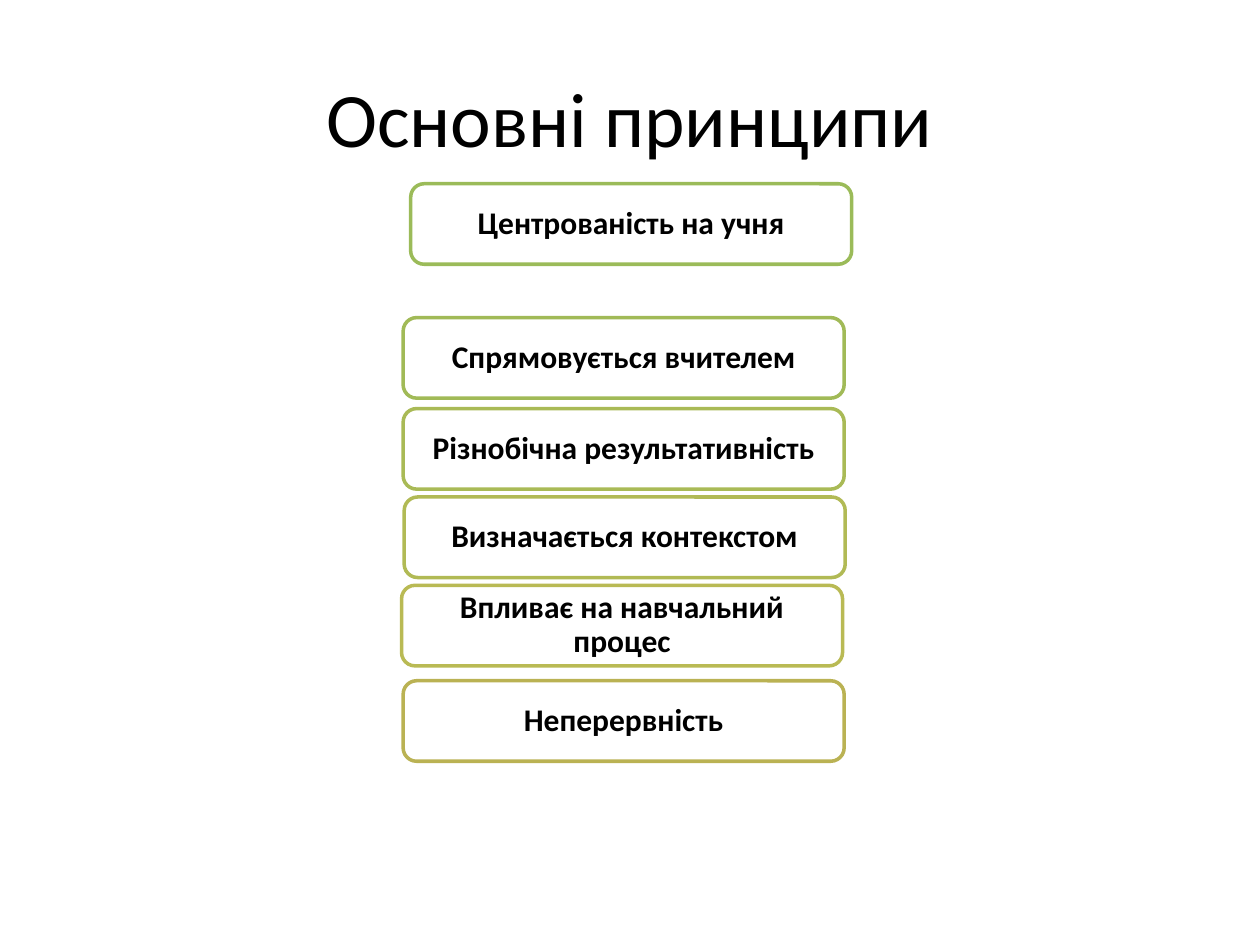
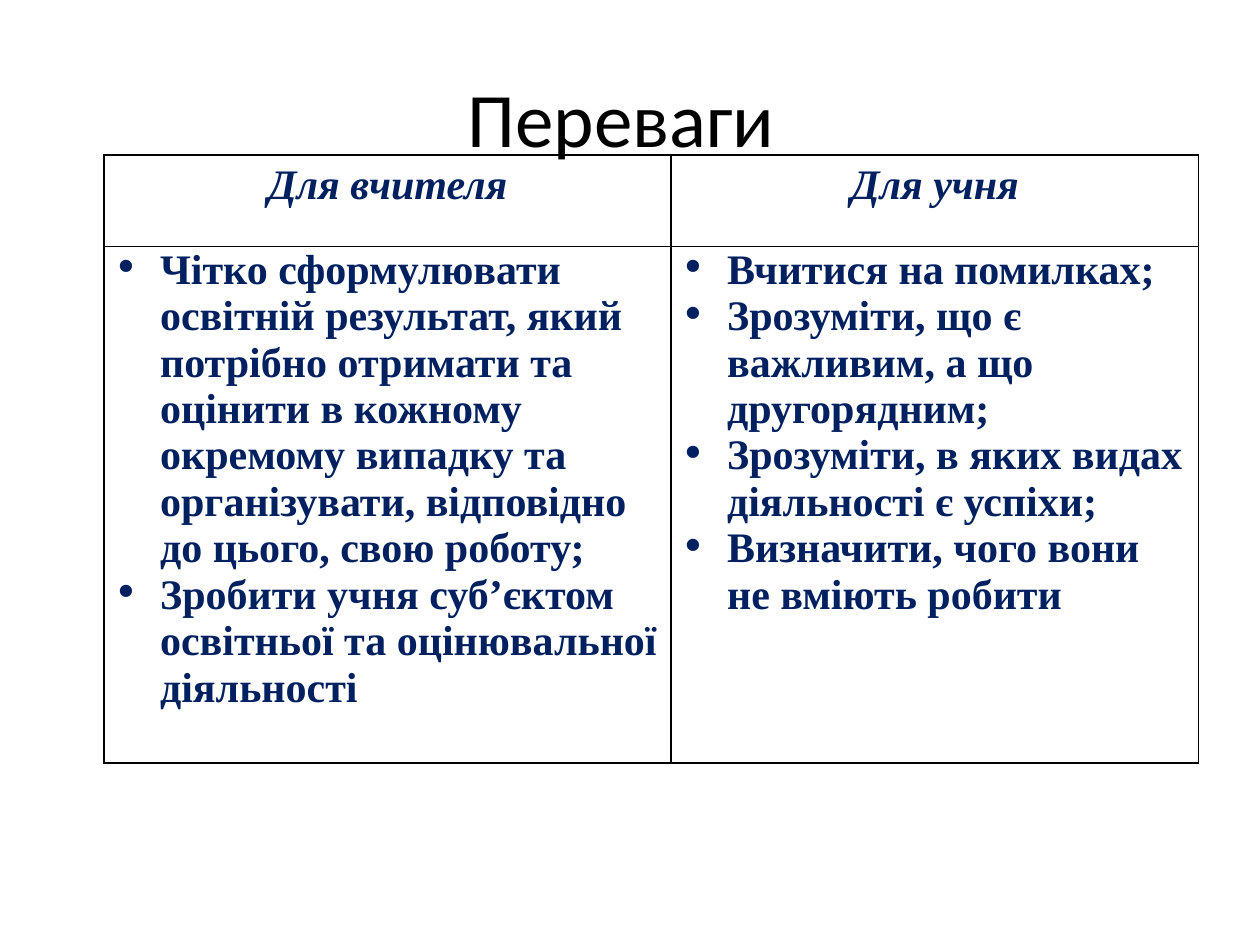
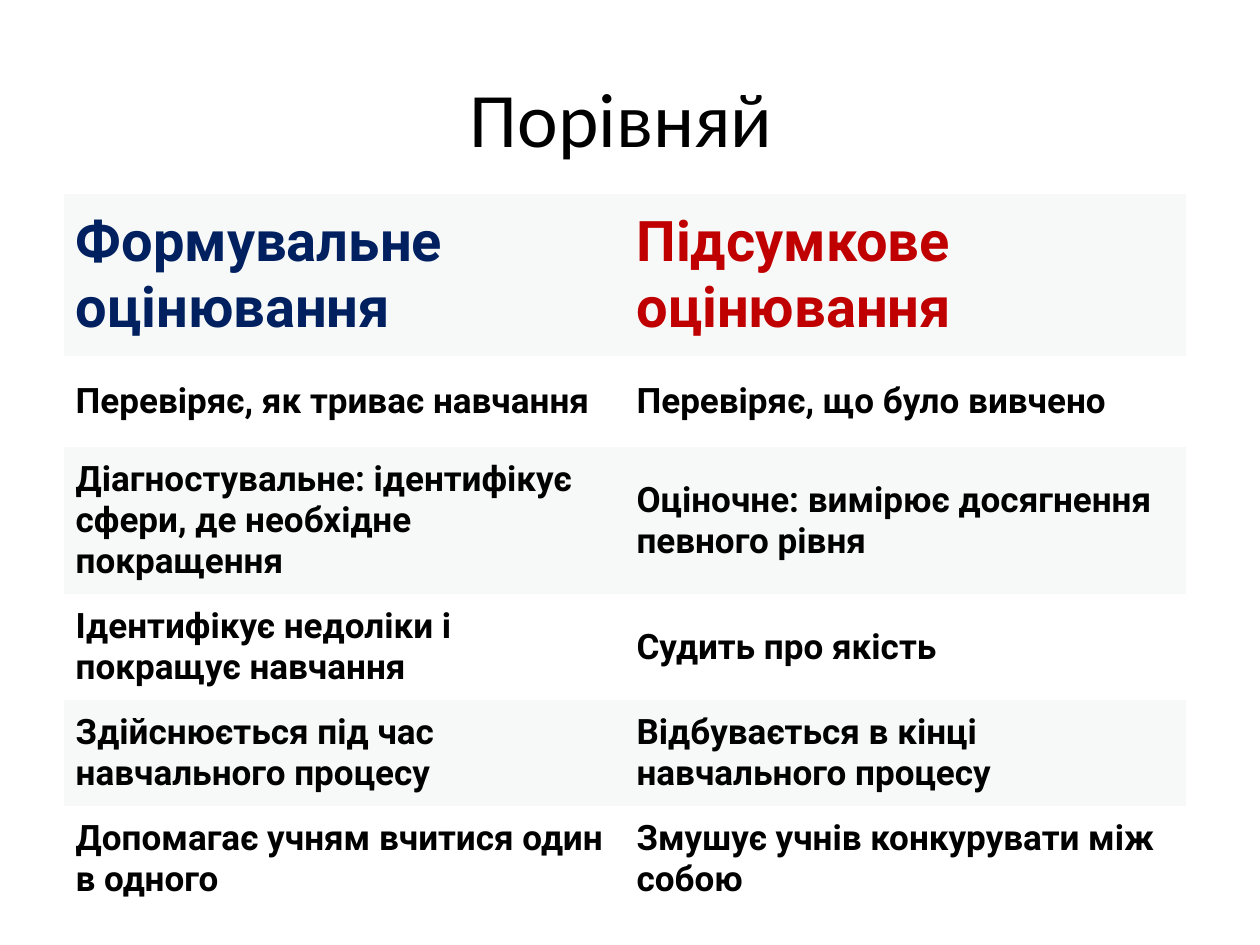
from lxml import etree
from pptx import Presentation
from pptx.dml.color import RGBColor
from pptx.enum import shapes, text
from pptx.oxml import ns
from pptx.util import Pt

BLACK = RGBColor(0, 0, 0)
WHITE = RGBColor(255, 255, 255)
NEAR_BLACK = RGBColor(1, 1, 1)
NAVY = RGBColor(0x00, 0x20, 0x60)
RED = RGBColor(0xC0, 0, 0)
BAND = RGBColor(0xF7, 0xF8, 0xF8)

TITLE_FONT = "Calibri"
PLAIN_TABLE_STYLE = "{2D5ABB26-0587-4C30-8999-92F81FD0307C}"
BOX_SIZE = (252, 46)

# text, left, top, outline
PRINCIPLES = [
    ("Центрованість на учня", 234.7, 105, RGBColor(0x9B, 0xBB, 0x59)),
    ("Спрямовується вчителем", 230.4, 181.5, RGBColor(0xA1, 0xBA, 0x57)),
    ("Різнобічна результативність", 230.4, 233.5, RGBColor(0xA9, 0xBA, 0x56)),
    ("Визначається контекстом", 231, 284, RGBColor(0xB1, 0xBA, 0x55)),
    ("Впливає на навчальний процес", 229.5, 334.5, RGBColor(0xB9, 0xBA, 0x54)),
    ("Неперервність", 230.4, 389, RGBColor(0xBA, 0xB2, 0x53)),
]

ADVANTAGES = {
    "Для вчителя": [
        "Чітко сформулювати освітній результат, який потрібно отримати та оцінити "
        "в кожному окремому випадку та організувати, відповідно до цього, свою роботу;",
        "Зробити учня суб’єктом освітньої та оцінювальної діяльності",
    ],
    "Для учня": [
        "Вчитися на помилках;",
        "Зрозуміти, що є важливим, а що другорядним;",
        "Зрозуміти, в яких видах діяльності є успіхи;",
        "Визначити, чого вони не вміють робити",
    ],
}

COMPARISON = [
    ("Формувальне оцінювання", "Підсумкове оцінювання"),
    ("Перевіряє, як триває навчання", "Перевіряє, що було вивчено"),
    ("Діагностувальне: ідентифікує сфери, де необхідне покращення",
     "Оціночне: вимірює досягнення певного рівня"),
    ("Ідентифікує недоліки і покращує навчання", "Судить про якість"),
    ("Здійснюється під час навчального процесу",
     "Відбувається в кінці навчального процесу"),
    ("Допомагає учням вчитися один в одного", "Змушує учнів конкурувати між собою"),
]


def set_font(para, name, size, color, bold=False, italic=False):
    font = para.font
    font.name, font.size = name, Pt(size)
    font.bold, font.italic = bold, italic
    font.color.rgb = color


def place(shape, left, top, width, height):
    shape.left, shape.top = Pt(left), Pt(top)
    shape.width, shape.height = Pt(width), Pt(height)


def set_margins(target, horizontal, vertical):
    target.margin_left = target.margin_right = Pt(horizontal)
    target.margin_top = target.margin_bottom = Pt(vertical)


def add_titled_page(deck, title):
    page = deck.slides.add_slide(deck.slide_layouts[5])
    place(page.shapes.title, 36, 21.6, 648, 90)
    frame = page.shapes.title.text_frame
    frame.text = title
    frame.vertical_anchor = text.MSO_ANCHOR.MIDDLE
    para = frame.paragraphs[0]
    para.alignment = text.PP_ALIGN.CENTER
    set_font(para, TITLE_FONT, 44, BLACK)
    return page


def add_principle(page, label, left, top, outline):
    box = page.shapes.add_shape(shapes.MSO_SHAPE.ROUNDED_RECTANGLE,
                                Pt(left), Pt(top), *map(Pt, BOX_SIZE))
    box.shadow.inherit = False
    box.fill.solid()
    box.fill.fore_color.rgb = WHITE
    box.line.color.rgb = outline
    box.line.width = Pt(2)
    frame = box.text_frame
    frame.word_wrap = True
    frame.vertical_anchor = text.MSO_ANCHOR.MIDDLE
    set_margins(frame, 7.2, 7.2)
    frame.text = label
    para = frame.paragraphs[0]
    para.alignment = text.PP_ALIGN.CENTER
    para.line_spacing = 0.9
    set_font(para, TITLE_FONT, 18, BLACK, bold=True)


def add_plain_table(page, left, top, widths, heights):
    frame = page.shapes.add_table(len(heights), len(widths), Pt(left), Pt(top),
                                  Pt(sum(widths)), Pt(sum(heights)))
    table = frame.table
    table.first_row = table.horz_banding = False
    table._tbl.tblPr.find(ns.qn("a:tableStyleId")).text = PLAIN_TABLE_STYLE
    for column, width in zip(table.columns, widths):
        column.width = Pt(width)
    for row, height in zip(table.rows, heights):
        row.height = Pt(height)
    return table


def add_borders(cell, color, width):
    """Line all four sides; call before setting the cell's fill."""
    props = cell._tc.get_or_add_tcPr()
    for side in ("lnL", "lnR", "lnT", "lnB"):
        line = etree.SubElement(props, ns.qn(f"a:{side}"), w=str(Pt(width)))
        fill = etree.SubElement(line, ns.qn("a:solidFill"))
        etree.SubElement(fill, ns.qn("a:srgbClr"), val=str(color))


def add_bullet(para, color, indent):
    """Hang a dot before the paragraph; call before setting its font."""
    props = para._p.get_or_add_pPr()
    props.set("marL", str(Pt(indent)))
    props.set("indent", str(-Pt(indent)))
    bullet_color = etree.SubElement(props, ns.qn("a:buClr"))
    etree.SubElement(bullet_color, ns.qn("a:srgbClr"), val=str(color))
    etree.SubElement(props, ns.qn("a:buChar"), char="∙")


def add_advantages(page):
    table = add_plain_table(page, 59.5, 88.5, [324, 301.5], [52.5, 295])
    for cell in table.iter_cells():
        add_borders(cell, BLACK, 1)
        cell.fill.background()
        set_margins(cell, 5, 0)
    for column, (heading, points) in enumerate(ADVANTAGES.items()):
        head, body = table.cell(0, column), table.cell(1, column)
        head.text = heading
        para = head.text_frame.paragraphs[0]
        para.alignment = text.PP_ALIGN.CENTER
        para.line_spacing = 1.15
        set_font(para, "Times New Roman", 24, NAVY, bold=True, italic=True)
        body.text = "\n".join(points)
        for para in body.text_frame.paragraphs:
            add_bullet(para, NAVY, 27)
            set_font(para, "Times New Roman", 24, NAVY, bold=True)


def add_comparison(page):
    table = add_plain_table(page, 36.5, 111, [320.5] * 2, [92.5, 52, 84, 60, 60, 60])
    for index, labels in enumerate(COMPARISON):
        for column, label in enumerate(labels):
            cell = table.cell(index, column)
            cell.text = label
            cell.vertical_anchor = text.MSO_ANCHOR.MIDDLE
            set_margins(cell, 6.75, 6.75)
            if index % 2:
                cell.fill.background()
            else:
                cell.fill.solid()
                cell.fill.fore_color.rgb = BAND
            size, color = (20, NEAR_BLACK) if index else (32, (NAVY, RED)[column])
            set_font(cell.text_frame.paragraphs[0], "Roboto", size, color, bold=True)


def main():
    deck = Presentation()
    deck.slide_width, deck.slide_height = Pt(720), Pt(540)
    page = add_titled_page(deck, "Основні принципи")
    for principle in PRINCIPLES:
        add_principle(page, *principle)
    add_advantages(add_titled_page(deck, "Переваги "))
    add_comparison(add_titled_page(deck, "Порівняй "))
    deck.save("out.pptx")


if __name__ == "__main__":
    main()
